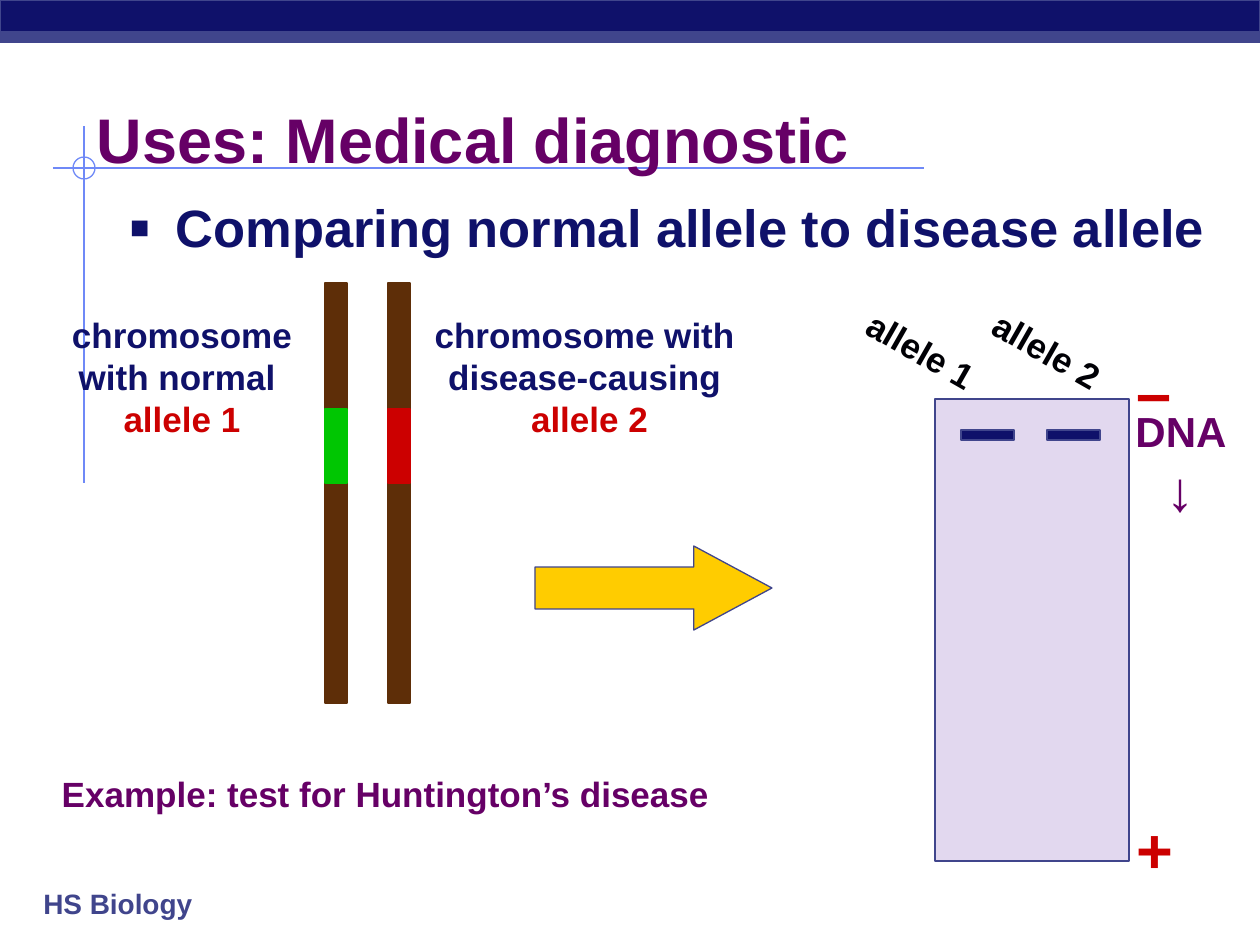
import pptx
import pptx.dml.color
import pptx.enum.shapes
import pptx.enum.text
import pptx.oxml.ns
import pptx.util
import lxml.etree

PX = 914400 / 126
FONT = "Arial"
COLORS = {
    "navy": "0F116A", "slate": "40458C", "rule": "6F89F7", "purple": "660066",
    "red": "CC0000", "green": "00C602", "brown": "5E2E08", "gel": "E2D8EF",
    "gold": "FFCC00", "black": "000005",
}
SHAPE = pptx.enum.shapes.MSO_SHAPE
ALIGN = pptx.enum.text.PP_ALIGN
ANCHOR = pptx.enum.text.MSO_ANCHOR


def emu(*lengths):
    return [pptx.util.Emu(round(length * PX)) for length in lengths]


def rgb(name):
    return pptx.dml.color.RGBColor.from_string(COLORS[name])


def style(paragraph, size, color, align):
    paragraph.alignment = align
    paragraph.font.name = FONT
    paragraph.font.size = pptx.util.Pt(size)
    paragraph.font.bold = True
    paragraph.font.color.rgb = rgb(color)


def add_block(slide, kind, box, fill, line):
    block = slide.shapes.add_shape(kind, *emu(*box))
    block.shadow.inherit = False
    if fill:
        block.fill.solid()
        block.fill.fore_color.rgb = rgb(fill)
    else:
        block.fill.background()
    block.line.color.rgb = rgb(line)
    block.line.width = pptx.util.Pt(0.75)
    return block


def add_rule(slide, start, end):
    rule = slide.shapes.add_connector(
        pptx.enum.shapes.MSO_CONNECTOR.STRAIGHT, *emu(*start, *end))
    rule.line.color.rgb = rgb("rule")
    rule.line.width = pptx.util.Pt(1)
    lxml.etree.SubElement(rule._element.spPr, pptx.oxml.ns.qn("a:effectLst"))


def add_label(slide, box, text, size, color, align=ALIGN.CENTER, wrap=False):
    label = slide.shapes.add_textbox(*emu(*box))
    frame = label.text_frame
    frame.word_wrap = wrap
    frame.vertical_anchor = ANCHOR.MIDDLE
    frame.paragraphs[0].text = text
    style(frame.paragraphs[0], size, color, align)
    return label


def add_frame(slide, box):
    left, top, width, height = box
    add_rule(slide, (left + 53, top + 168), (left + 924, top + 168))
    add_rule(slide, (left + 84, top + 126), (left + 84, top + 483))
    add_block(slide, SHAPE.OVAL, (left + 73, top + 157, 22, 22), None, "rule")
    add_block(slide, SHAPE.RECTANGLE, (left, top, width, 42), "navy", "slate")
    add_block(slide, SHAPE.RECTANGLE, (left, top + 32, width, 10), "slate", "slate")
    add_label(slide, (left + 31, top + height - 65, 199, 47), "HS Biology", 16,
              "slate", ALIGN.LEFT, True)


def fill_placeholder(slide, placeholder, box, text, size, color):
    slide.shapes._spTree.append(placeholder._element)
    placeholder.left, placeholder.top, placeholder.width, placeholder.height = emu(*box)
    frame = placeholder.text_frame
    frame.auto_size = pptx.enum.text.MSO_AUTO_SIZE.NONE
    frame.vertical_anchor = ANCHOR.TOP
    frame.margin_top = emu(6)[0]
    frame.margin_right = 0
    paragraph = frame.paragraphs[0]
    paragraph.text = text
    paragraph.space_before = pptx.util.Pt(0)
    style(paragraph, size, color, ALIGN.LEFT)
    return paragraph


def add_square_bullet(paragraph, color, indent):
    properties = paragraph._p.get_or_add_pPr()
    properties.set("marL", str(emu(indent)[0]))
    properties.set("indent", str(emu(-indent)[0]))
    qn = pptx.oxml.ns.qn
    bullet_color = lxml.etree.Element(qn("a:buClr"))
    lxml.etree.SubElement(bullet_color, qn("a:srgbClr"), val=COLORS[color])
    bullet_size = lxml.etree.Element(qn("a:buSzPct"), val="120000")
    bullet_font = lxml.etree.Element(qn("a:buFont"), typeface=FONT)
    bullet = lxml.etree.Element(qn("a:buChar"), char="▪")
    default_font = properties.find(qn("a:defRPr"))
    for part in (bullet_color, bullet_size, bullet_font, bullet):
        default_font.addprevious(part)


def add_chromosomes(slide, box):
    left, top, width, height = box
    chromosomes = [
        (266, "green", 0, 246, "chromosome\vwith normal \v", "allele 1"),
        (329, "red", 363, 335, "chromosome with \vdisease-causing \v", "allele 2"),
    ]
    for strand, locus, label_left, label_width, description, allele in chromosomes:
        for offset, length, color in ((0, height, "brown"), (126, 74, locus)):
            add_block(slide, SHAPE.RECTANGLE,
                      (left + strand, top + offset, 22, length), color, color)
        label = add_label(slide, (left + label_left, top + 24, label_width, 139),
                          description, 20, "navy")
        allele_run = label.text_frame.paragraphs[0].add_run()
        allele_run.text = allele
        allele_run.font.color.rgb = rgb("red")


def add_gel(slide, box):
    left, top, width, height = box
    for sign, offset in (("–", -53), ("+", height - 57)):
        add_label(slide, (left + width - 5, top + offset, 60, 88), sign, 36, "red",
                  wrap=True)
    add_block(slide, SHAPE.RECTANGLE, box, "gel", "slate")
    for lane, allele in enumerate(("allele 1", "allele 2")):
        label = add_label(slide, (left - 85 + 126 * lane, top - 76, 142, 54),
                          allele, 20, "black")
        label.rotation = 29.7
        add_block(slide, SHAPE.RECTANGLE, (left + 26 + 86 * lane, top + 31, 53, 10),
                  "navy", "slate")
    migration = add_label(slide, (left + width - 6, top, 116, 130), "DNA", 24, "purple")
    direction = migration.text_frame.add_paragraph()
    direction.text = "↓"
    style(direction, 32, "purple", ALIGN.CENTER)


def add_step_arrow(slide, box):
    arrow = add_block(slide, SHAPE.RIGHT_ARROW, box, "gold", "slate")
    arrow.adjustments[0] = 0.5
    arrow.adjustments[1] = 0.93


def main():
    deck = pptx.Presentation()
    deck.slide_width, deck.slide_height = emu(1260, 945)
    slide = deck.slides.add_slide(deck.slide_layouts[1])
    add_frame(slide, (0, 0, 1260, 945))
    fill_placeholder(slide, slide.shapes.title, (84, 94, 1071, 105),
                     "Uses: Medical diagnostic", 36, "purple")
    topic = fill_placeholder(slide, slide.placeholders[1], (116, 189, 1102, 609),
                             "Comparing normal allele to disease allele", 30, "navy")
    add_square_bullet(topic, "navy", 47)
    add_chromosomes(slide, (59, 283, 698, 420))
    add_gel(slide, (935, 399, 194, 462))
    add_step_arrow(slide, (535, 546, 237, 84))
    add_label(slide, (49, 766, 673, 54), "Example: test for Huntington’s disease",
              20, "purple")
    deck.save("out.pptx")


if __name__ == "__main__":
    main()
